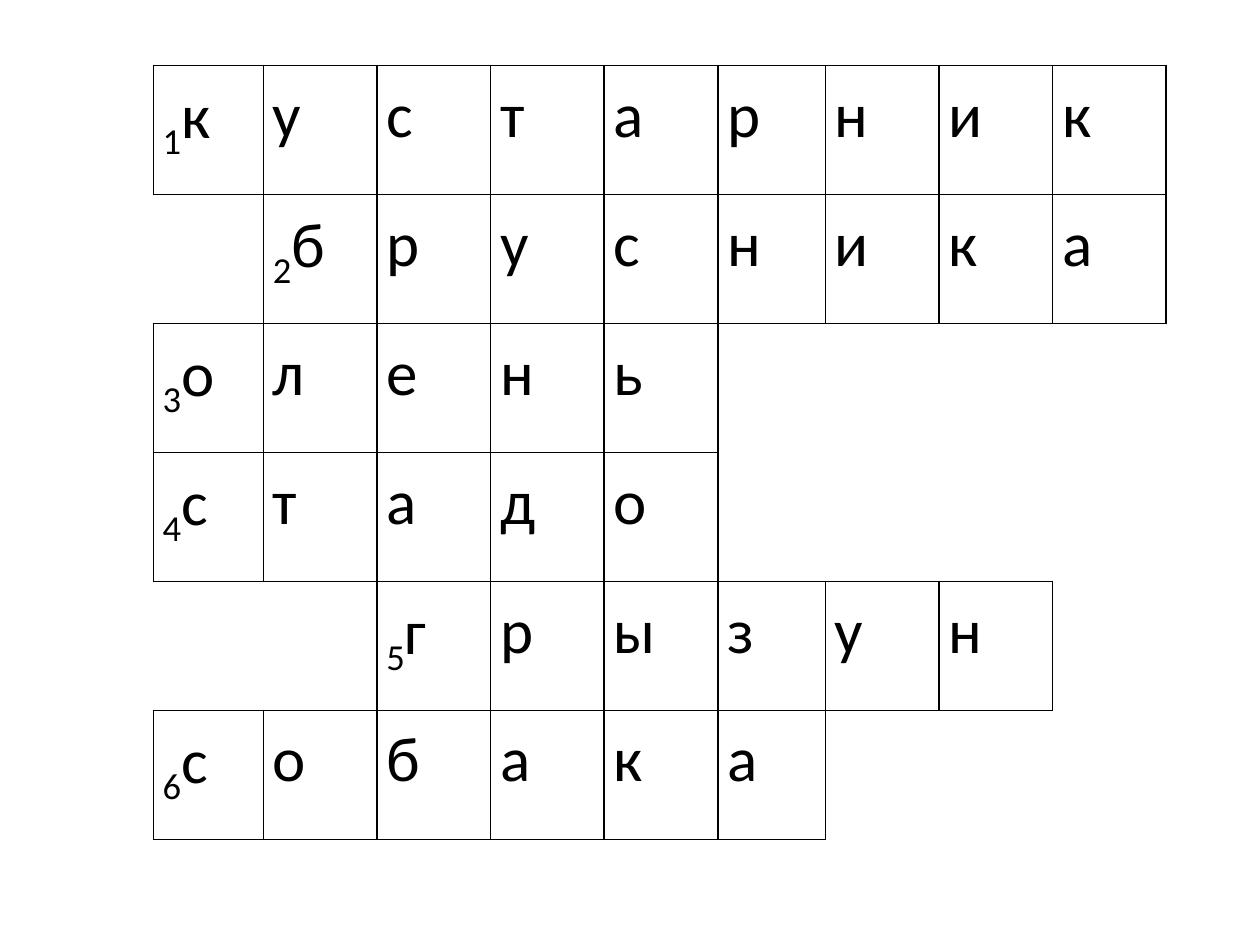
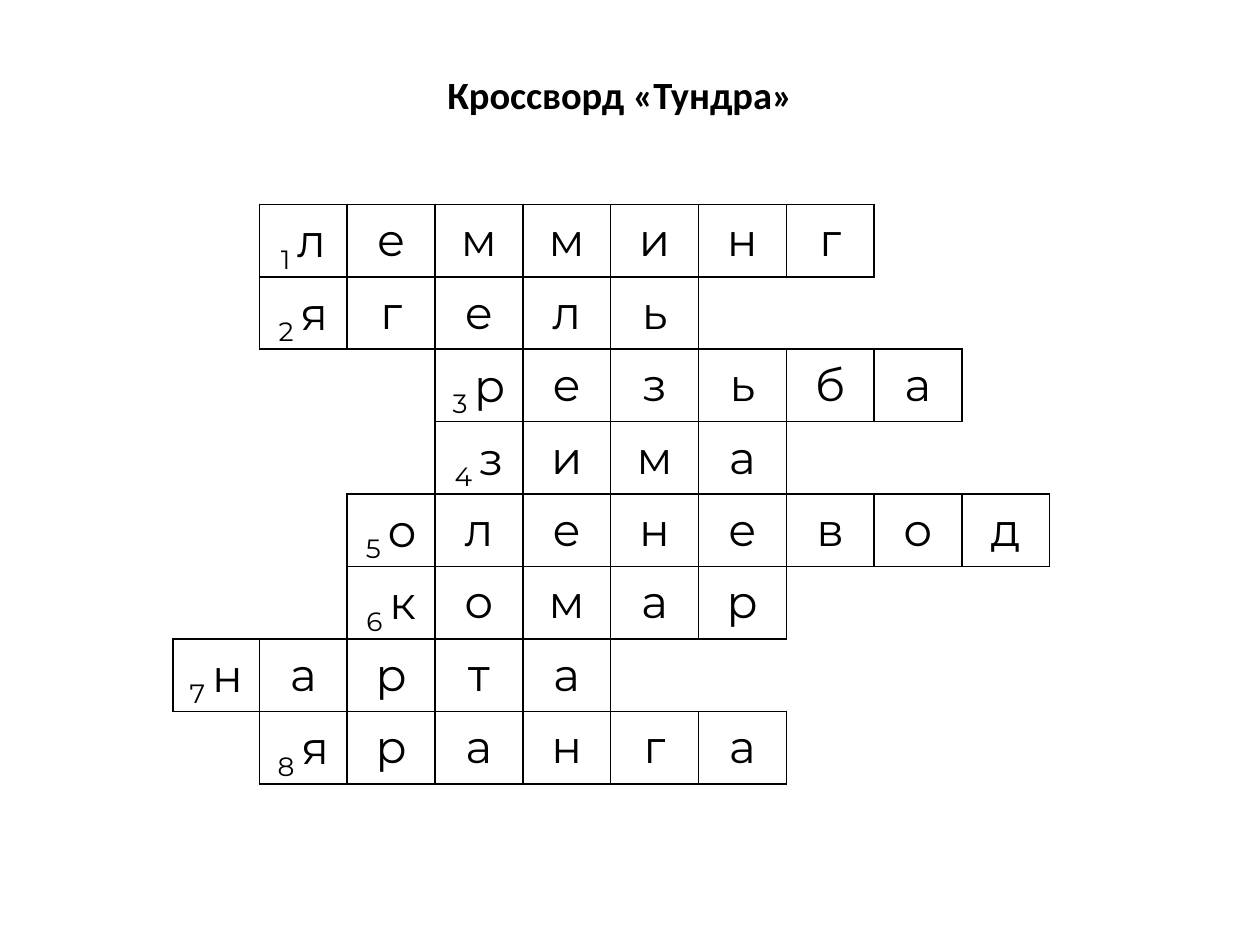
from dataclasses import dataclass

import pptx
import pptx.dml.color
import pptx.enum.text
import pptx.oxml
import pptx.oxml.ns
import pptx.util
from pptx.util import Cm, Pt


@dataclass(frozen=True)
class Theme:
    ink: str = "000000"
    paper: str = "FFFFFF"
    text_font: str = "Calibri"
    grid_font: str = "Montserrat"
    title_size: int = 22
    large_letter: int = 36
    small_letter: int = 26
    line_width: int = 1
    line_spacing: float = 1.15
    side_margin: float = 0.19


def rgb(value):
    return pptx.dml.color.RGBColor.from_string(value)


class CrosswordDeck:
    def __init__(self, theme):
        self.theme = theme
        self.deck = pptx.Presentation()
        self.deck.slide_width, self.deck.slide_height = Cm(25.4), Cm(19.05)
        self.slide = None

    def new_slide(self):
        self.slide = self.deck.slides.add_slide(self.deck.slide_layouts[6])
        self.slide.background.fill.solid()
        self.slide.background.fill.fore_color.rgb = rgb(self.theme.paper)

    def add_run(self, paragraph, text, font, size, bold=False, subscript=False):
        run = paragraph.add_run()
        run.text = text
        run.font.name, run.font.size, run.font.bold = font, Pt(size), bold
        run.font.color.rgb = rgb(self.theme.ink)
        if subscript:
            run._r.get_or_add_rPr().set("baseline", "-25000")

    def add_title(self, text, left, top, width, height):
        title = self.slide.shapes.add_textbox(Cm(left), Cm(top), Cm(width), Cm(height))
        title.fill.solid()
        title.fill.fore_color.rgb = rgb(self.theme.paper)
        frame = title.text_frame
        frame.word_wrap = True
        frame.auto_size = pptx.enum.text.MSO_AUTO_SIZE.SHAPE_TO_FIT_TEXT
        frame.vertical_anchor = pptx.enum.text.MSO_ANCHOR.MIDDLE
        paragraph = frame.paragraphs[0]
        paragraph.alignment = pptx.enum.text.PP_ALIGN.CENTER
        self.add_run(paragraph, text, self.theme.text_font, self.theme.title_size, bold=True)

    def set_borders(self, cell, drawn):
        """Draw the sides (L, R, T, B) marked true and hide the others."""
        properties = cell._tc.get_or_add_tcPr()
        for position, (side, visible) in enumerate(drawn.items()):
            paint = (f'<a:solidFill><a:srgbClr val="{self.theme.ink}"/></a:solidFill>'
                     if visible else "<a:noFill/>")
            properties.insert(position, pptx.oxml.parse_xml(
                f'<a:ln{side} {pptx.oxml.ns.nsdecls("a")} '
                f'w="{Pt(self.theme.line_width)}">{paint}</a:ln{side}>'))

    def add_crossword(self, answers, left, top, column_widths, row_height,
                      font, size, alignment, number_gap=""):
        """Lay out numbered answers, each given as (first column, word)."""
        letters = {(row, start + offset): letter
                   for row, (start, word) in enumerate(answers)
                   for offset, letter in enumerate(word)}
        grid = self.slide.shapes.add_table(
            len(answers), len(column_widths), Cm(left), Cm(top),
            Cm(sum(column_widths)), Cm(row_height * len(answers))).table
        grid.first_row = grid.horz_banding = False
        for column, width in zip(grid.columns, column_widths):
            column.width = Cm(width)
        for row, (start, _) in enumerate(answers):
            grid.rows[row].height = Cm(row_height)
            for column in range(len(column_widths)):
                cell = grid.cell(row, column)
                cell.fill.background()
                cell.margin_left = cell.margin_right = Cm(self.theme.side_margin)
                cell.margin_top = cell.margin_bottom = 0
                neighbours = {"L": (row, column - 1), "R": (row, column + 1),
                              "T": (row - 1, column), "B": (row + 1, column)}
                filled = (row, column) in letters
                self.set_borders(cell, {side: filled or place in letters
                                        for side, place in neighbours.items()})
                if not filled:
                    continue
                paragraph = cell.text_frame.paragraphs[0]
                paragraph.alignment = alignment
                paragraph.line_spacing = self.theme.line_spacing
                if column == start:
                    self.add_run(paragraph, f"{row + 1}{number_gap}", font, size, subscript=True)
                self.add_run(paragraph, letters[row, column], font, size)


def main():
    theme = Theme()
    crosswords = CrosswordDeck(theme)

    crosswords.new_slide()
    crosswords.add_crossword(
        [(0, "кустарник"), (1, "брусника"), (0, "олень"),
         (0, "стадо"), (2, "грызун"), (0, "собака")],
        left=3.09, top=1.32,
        column_widths=[2.22] + [2.29] * 4 + [2.17] + [2.29] * 3, row_height=2.6,
        font=theme.text_font, size=theme.large_letter,
        alignment=pptx.enum.text.PP_ALIGN.LEFT)

    crosswords.new_slide()
    crosswords.add_crossword(
        [(1, "лемминг"), (1, "ягель"), (3, "резьба"), (3, "зима"),
         (2, "оленевод"), (2, "комар"), (0, "нарта"), (1, "яранга")],
        left=3.49, top=4.12,
        column_widths=[1.74] + [1.77] * 9, row_height=1.46,
        font=theme.grid_font, size=theme.small_letter,
        alignment=pptx.enum.text.PP_ALIGN.CENTER, number_gap=" ")
    crosswords.add_title("Кроссворд «Тундра»", 3.5, 1.3, 18, 1.2)

    crosswords.deck.save("out.pptx")


if __name__ == "__main__":
    main()
